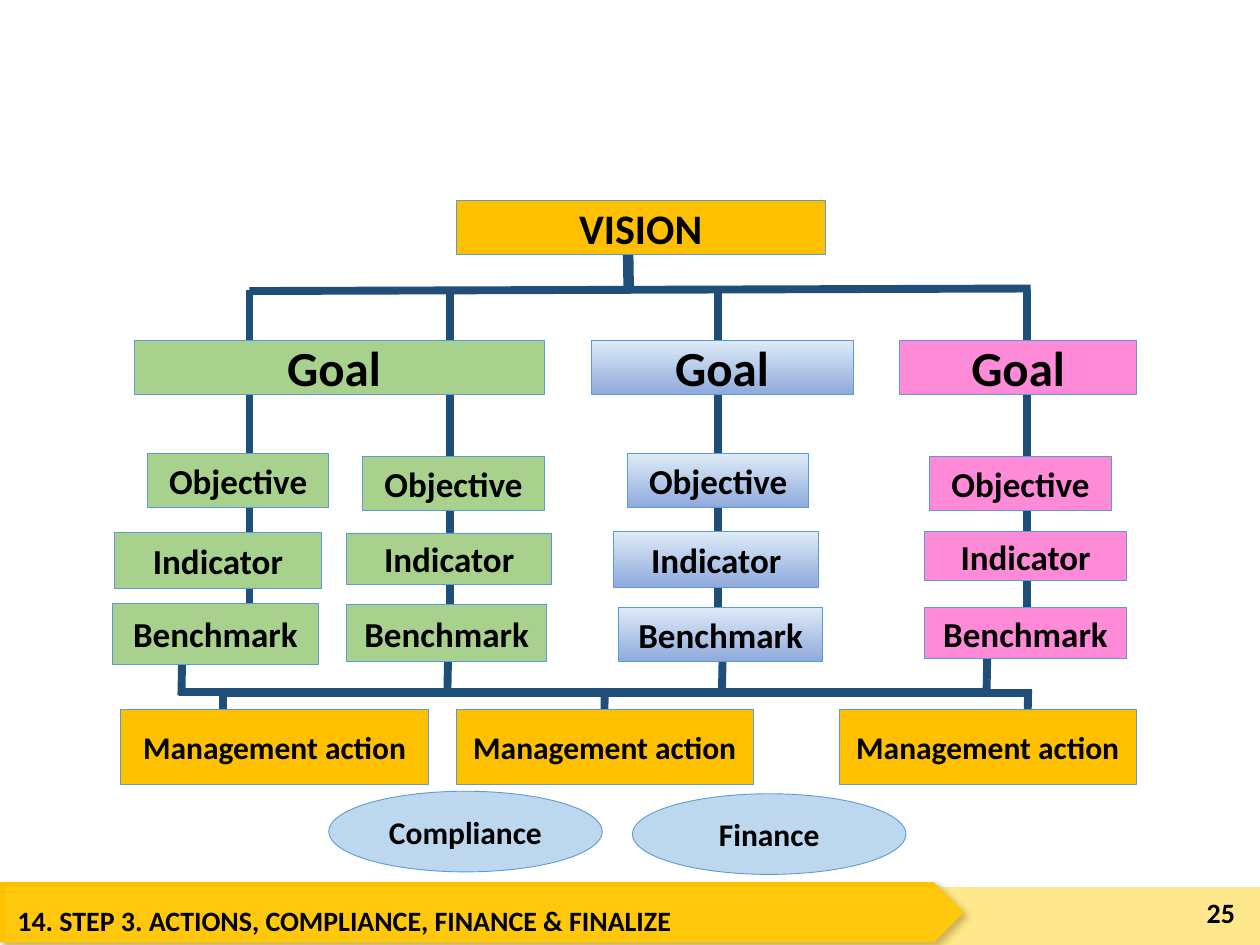
from typing import NamedTuple

from lxml import etree
from pptx import Presentation
from pptx import util as u
from pptx.dml.color import RGBColor
from pptx.enum import shapes, text
from pptx.oxml import parse_xml
from pptx.oxml.ns import nsdecls, qn

GOLD, GREEN, PINK, SKY = "FFC000", "A9D18E", "FF8AD8", "BDD7EE"
BLUE_FADE = ("8FAADC", "DEEBF7")  # bottom to top
NAVY, EDGE, BLACK = "1F4E79", "5B9BD5", "000000"
RECT, OVAL = shapes.MSO_SHAPE.RECTANGLE, shapes.MSO_SHAPE.OVAL


class Box(NamedTuple):
    label: str
    x: float
    y: float
    w: float
    h: float
    fill: str | tuple[str, str]
    size: int
    kind: int = RECT


class Line(NamedTuple):
    x1: float
    y1: float
    x2: float
    y2: float
    width: float = 4.5


def rgb(value: str) -> RGBColor:
    return RGBColor.from_string(value)


def write(tf, label: str, size: int, align, anchor) -> None:
    tf.word_wrap = True
    tf.vertical_anchor = anchor
    p = tf.paragraphs[0]
    p.alignment = align
    r = p.add_run()
    r.text = label
    for name, value in {"name": "Calibri", "size": u.Pt(size), "bold": True}.items():
        setattr(r.font, name, value)
    r.font.color.rgb = rgb(BLACK)


def add_plain(s, kind, x: float, y: float, w: float, h: float, fill):
    sp = s.shapes.add_shape(kind, *map(u.Inches, (x, y, w, h)))
    sp.shadow.inherit = False
    if isinstance(fill, tuple):
        sp.fill.gradient()
        sp.fill.gradient_angle = 90
        for stop, color, position in zip(sp.fill.gradient_stops, fill, (0, 1)):
            stop.color.rgb = rgb(color)
            stop.position = position
    else:
        sp.fill.solid()
        sp.fill.fore_color.rgb = rgb(fill)
    sp.line.fill.background()
    return sp


def add_box(s, box: Box) -> None:
    sp = add_plain(s, box.kind, box.x, box.y, box.w, box.h, box.fill)
    sp.line.color.rgb = rgb(EDGE)
    sp.line.width = u.Pt(0.5)
    write(sp.text_frame, box.label, box.size,
          text.PP_ALIGN.CENTER, text.MSO_ANCHOR.MIDDLE)


def add_line(s, line: Line) -> None:
    c = s.shapes.add_connector(shapes.MSO_CONNECTOR.STRAIGHT,
                               *map(u.Inches, line[:4]))
    c.line.color.rgb = rgb(NAVY)
    c.line.width = u.Pt(line.width)
    etree.SubElement(c._element.spPr, qn("a:effectLst"))


def add_label(s, label: str, x: float, y: float, w: float, h: float,
              align, anchor) -> None:
    tb = s.shapes.add_textbox(*map(u.Inches, (x, y, w, h)))
    write(tb.text_frame, label, 16, align, anchor)


def add_footer(s) -> None:
    banner = add_plain(s, shapes.MSO_SHAPE.PENTAGON, 0, 7, 7.65, 0.48, GOLD)
    banner._element.spPr.find(qn("a:effectLst")).append(parse_xml(
        f'<a:outerShdw {nsdecls("a")} blurRad="50800" dist="38100" dir="2700000" '
        'algn="tl" rotWithShape="0"><a:srgbClr val="000000">'
        '<a:alpha val="40000"/></a:srgbClr></a:outerShdw>'))
    strip = add_plain(s, RECT, 0.04, 7.04, 9.96, 0.49, "FFD01B")
    color = strip._element.spPr.find(qn("a:solidFill"))[0]
    etree.SubElement(color, qn("a:alpha"), val="50000")
    add_label(s, "14. STEP 3. ACTIONS, COMPLIANCE, FINANCE & FINALIZE",
              0.04, 7.12, 7.35, 0.41, text.PP_ALIGN.LEFT, text.MSO_ANCHOR.TOP)
    add_label(s, "25", 9.17, 7.04, 0.73, 0.4,
              text.PP_ALIGN.RIGHT, text.MSO_ANCHOR.MIDDLE)


# Lines joining the benchmarks to the management actions
ACTION_LINES = [
    Line(1.77, 5.5, 1.77, 6.02), Line(1.77, 5.5, 8.18, 5.5),
    Line(8.16, 5.47, 8.15, 5.99), Line(4.8, 5.48, 4.79, 6.01),
    Line(7.83, 5.49, 7.84, 4.97), Line(7.84, 5.49, 1.42, 5.49),
    Line(1.44, 5.52, 1.45, 5), Line(5.73, 5.48, 5.74, 4.96),
    Line(3.55, 5.53, 3.56, 5.01),
]
ACTIONS = [Box("Management action", x, 5.63, w, 0.6, GOLD, 18)
           for x, w in ((0.96, 2.44), (3.62, 2.36), (6.66, 2.36))]

# Lines from the vision down through each column
TREE_LINES = [
    Line(4.98, 1.65, 4.99, 2.31, 6),
    *(Line(x, 2.3, x, 5.03) for x in (1.98, 3.57, 5.7, 8.15)),
    Line(1.98, 2.31, 8.18, 2.29),
]
VISION = Box("VISION", 3.62, 1.59, 2.93, 0.43, GOLD, 24)
GOALS = [Box(label, x, 2.7, w, 0.43, fill, 28) for label, x, w, fill in (
    ("Goal ", 1.07, 3.25, GREEN),
    ("Goal", 4.69, 2.08, BLUE_FADE),
    ("Goal", 7.14, 1.88, PINK),
)]

# Each column: fill, then the place of its objective, indicator and benchmark
STEPS = ("Objective", "Indicator", "Benchmark")
COLUMNS = [
    (GREEN, (1.17, 3.6, 1.44, 0.43), (0.91, 4.23, 1.64, 0.44), (0.89, 4.79, 1.64, 0.48)),
    (GREEN, (2.88, 3.62, 1.44, 0.43), (2.75, 4.23, 1.63, 0.41), (2.75, 4.8, 1.59, 0.45)),
    (BLUE_FADE, (4.98, 3.6, 1.44, 0.43), (4.87, 4.22, 1.63, 0.44), (4.91, 4.82, 1.62, 0.43)),
    (PINK, (7.38, 3.62, 1.44, 0.43), (7.34, 4.22, 1.6, 0.39), (7.34, 4.82, 1.6, 0.41)),
]
STEP_BOXES = [Box(step, *place, fill, 20)
              for fill, *places in COLUMNS for step, place in zip(STEPS, places)]
OVALS = [Box("Compliance", 2.61, 6.28, 2.17, 0.64, SKY, 18, OVAL),
         Box("Finance", 5.02, 6.3, 2.17, 0.64, SKY, 18, OVAL)]


def main() -> None:
    prs = Presentation()
    prs.slide_width, prs.slide_height = u.Inches(10), u.Inches(7.5)
    s = prs.slides.add_slide(prs.slide_layouts[6])
    add_footer(s)
    for lines, boxes in ((ACTION_LINES, ACTIONS),
                         (TREE_LINES, [VISION, *GOALS, *STEP_BOXES, *OVALS])):
        for line in lines:
            add_line(s, line)
        for box in boxes:
            add_box(s, box)
    prs.save("out.pptx")


if __name__ == "__main__":
    main()
